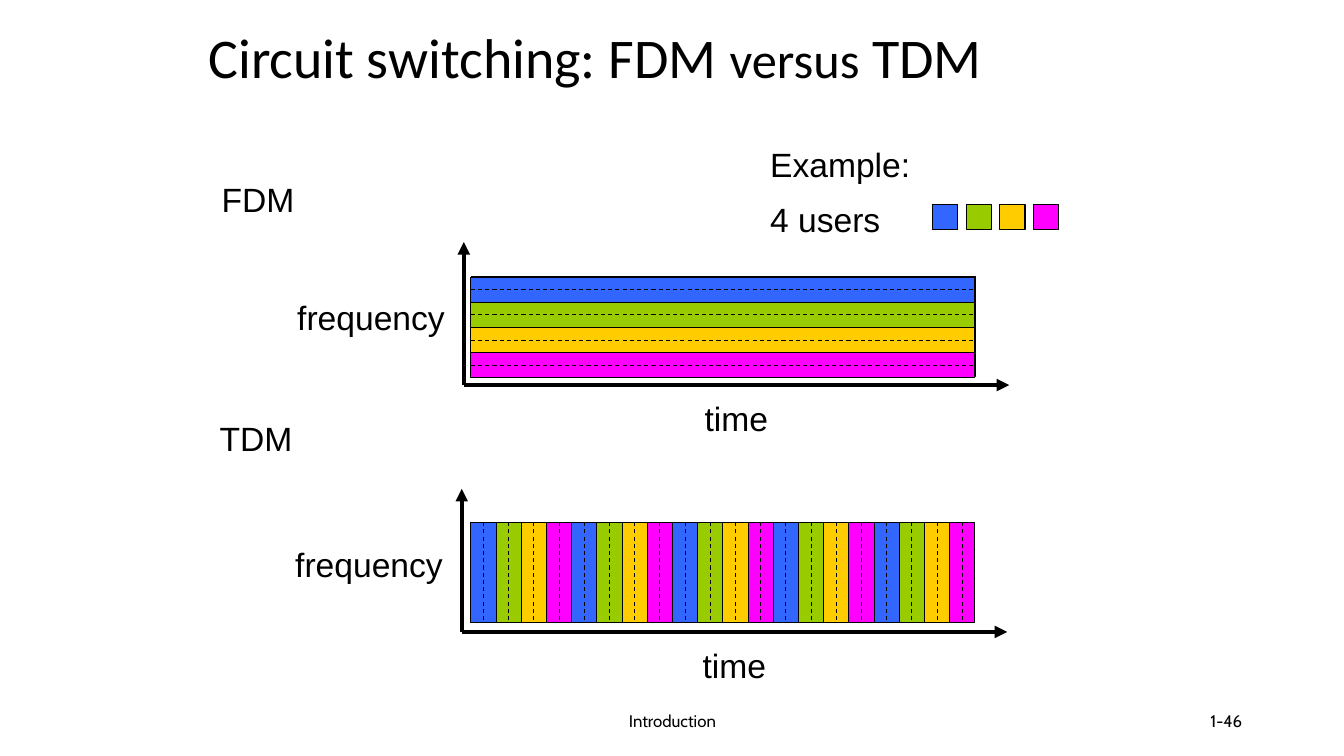
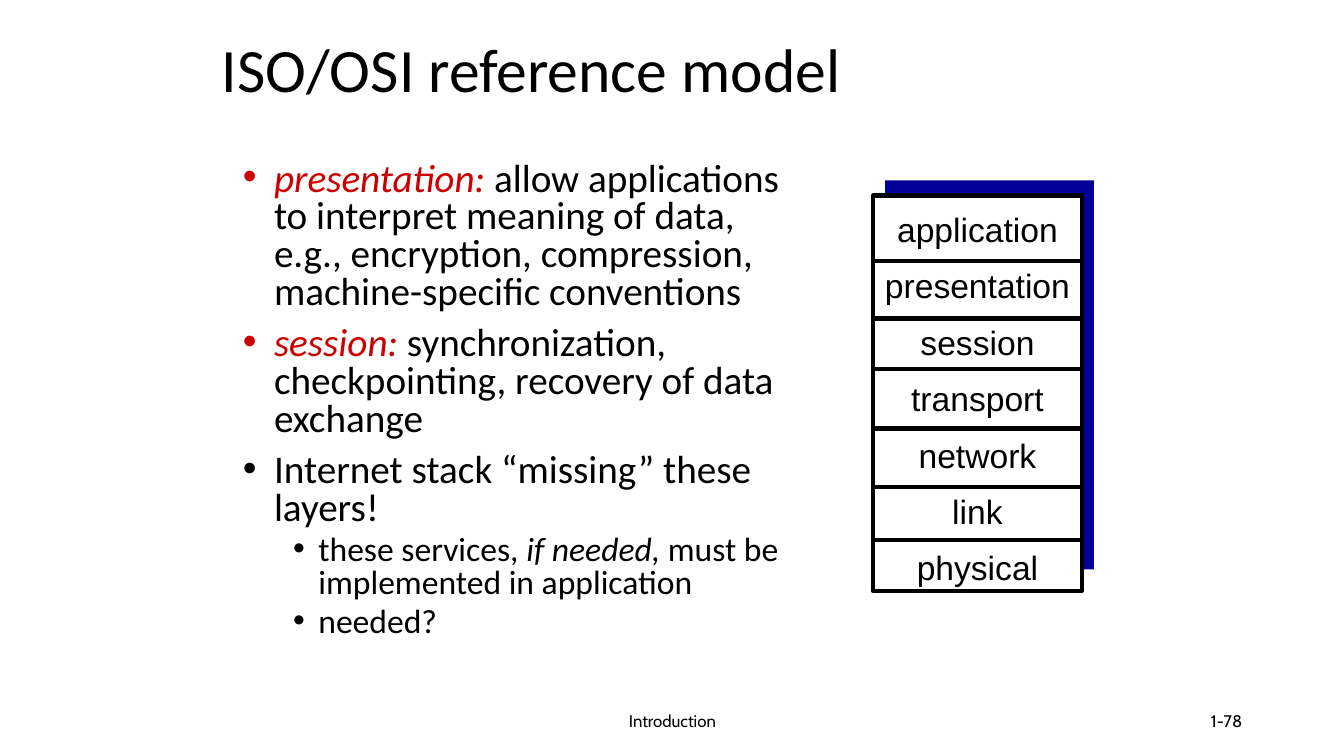
import pptx
import pptx.util
import pptx.dml.color
import pptx.enum.dml
import pptx.enum.shapes
import pptx.enum.text
import pptx.oxml.ns
import lxml.etree

Inches = pptx.util.Inches
Pt = pptx.util.Pt
Align = pptx.enum.text.PP_ALIGN
Anchor = pptx.enum.text.MSO_ANCHOR
qn = pptx.oxml.ns.qn

BLACK, WHITE, RED, NAVY, BASE = "000000", "FFFFFF", "CC0000", "000099", "4472C4"
USERS = ["3366FF", "99CC00", "FFCC00", "FF00FF"]
HEAD, PLAIN, FOOT = "Calibri", "Arial", "Cabin"
BAND = 0.25


def tint(code):
    return pptx.dml.color.RGBColor.from_string(code)


def style(para, face, size, align=Align.LEFT, lead=None):
    para.alignment = align
    if lead:
        para.line_spacing = lead
    para.font.name = face
    para.font.size = Pt(size)
    para.font.color.rgb = tint(BLACK)


def add_run(para, text, size=None, color=None, slant=None):
    run = para.add_run()
    run.text = text
    if size:
        run.font.size = Pt(size)
    if color:
        run.font.color.rgb = tint(color)
    if slant:
        run.font.italic = True


def frame(slide, box, wrap=True, anchor=Anchor.TOP):
    body = slide.shapes.add_textbox(*map(Inches, box)).text_frame
    body.word_wrap = wrap
    body.vertical_anchor = anchor
    return body


def label(slide, text, box, face=PLAIN, size=24, align=Align.LEFT,
          wrap=False, anchor=Anchor.TOP):
    para = frame(slide, box, wrap, anchor).paragraphs[0]
    style(para, face, size, align)
    add_run(para, text)


def block(slide, box, fill, width=0.75):
    kind = pptx.enum.shapes.MSO_SHAPE.RECTANGLE
    shape = slide.shapes.add_shape(kind, *map(Inches, box))
    shape.shadow.inherit = False
    shape.fill.solid()
    shape.fill.fore_color.rgb = tint(fill)
    if width:
        shape.line.color.rgb = tint(BLACK)
        shape.line.width = Pt(width)
    else:
        shape.line.fill.background()


def rule(slide, start, end, width=3, dash=False, arrow=False):
    kind = pptx.enum.shapes.MSO_CONNECTOR.STRAIGHT
    line = slide.shapes.add_connector(kind, *map(Inches, (*start, *end)))
    line.line.color.rgb = tint(BLACK)
    line.line.width = Pt(width)
    if dash:
        line.line.dash_style = pptx.enum.dml.MSO_LINE.DASH
    if arrow:
        tail = lxml.etree.SubElement(line.line._get_or_add_ln(), qn("a:tailEnd"))
        tail.set("type", "triangle")
    lxml.etree.SubElement(line._element.spPr, qn("a:effectLst"))


def title(slide, box, size, parts):
    para = frame(slide, box, anchor=Anchor.MIDDLE).paragraphs[0]
    style(para, HEAD, size, lead=0.9)
    for part in parts:
        add_run(para, *part)


def footer(slide, page):
    label(slide, "Introduction", (4.42, 6.95, 4.5, 0.4), FOOT, 12,
          Align.CENTER, True, Anchor.MIDDLE)
    label(slide, page, (9.42, 6.95, 3, 0.4), FOOT, 12,
          Align.RIGHT, True, Anchor.MIDDLE)


def axes(slide, x, y):
    rule(slide, (x, y), (x, y - 1.42), arrow=True)
    rule(slide, (x, y), (x + 5.41, y), arrow=True)
    label(slide, "frequency", (x - 1.75, y - 0.92, 1.67, 0.5))
    label(slide, "time", (x + 2.29, y + 0.08, 0.83, 0.5))


def bands(slide, box, count, across):
    x, y, w, h = box
    for i in range(count):
        step = i * BAND
        mid = step + BAND / 2
        if across:
            part = (x, y + step, w, BAND)
            ends = (x, y + mid), (x + w, y + mid)
        else:
            part = (x + step, y, BAND, h)
            ends = (x + mid, y), (x + mid, y + h)
        block(slide, part, USERS[i % len(USERS)])
        rule(slide, *ends, width=0.75, dash=True)


def legend(slide, x, y):
    label(slide, "Example:", (x, y, 1.59, 0.5))
    label(slide, "4 users", (x, y + 0.54, 1.3, 0.5))
    for i, color in enumerate(USERS):
        block(slide, (x + 1.71 + i / 3, y + 0.65, BAND, BAND), color)


def bullets(slide, box, items):
    body = frame(slide, box)
    for i, (level, parts) in enumerate(items):
        para = body.add_paragraph() if i else body.paragraphs[0]
        left, hang, size, gap = [(0.31, 0.31, 28, 10), (0.75, 0.25, 24, 5)][level]
        para.level = level
        props = para._p.get_or_add_pPr()
        props.set("marL", str(Inches(left)))
        props.set("indent", str(-Inches(hang)))
        lxml.etree.SubElement(props, qn("a:buFont")).set("typeface", PLAIN)
        lxml.etree.SubElement(props, qn("a:buChar")).set("char", "•")
        style(para, HEAD, size, lead=0.8)
        para.space_before = Pt(gap)
        for part in parts:
            add_run(para, *part)


def stack(slide, box, names, cuts):
    x, y, w, h = box
    block(slide, (x + 0.12, y - 0.15, w, h - 0.06), NAVY, 0)
    block(slide, box, WHITE, 3)
    for i, name in enumerate(names):
        label(slide, name, (x - 0.05, y + 0.08 + i * 0.56, w + 0.1, 0.5),
              align=Align.CENTER, wrap=True, anchor=Anchor.MIDDLE)
    for cut in cuts:
        rule(slide, (x - 0.02, y + cut), (x + w - 0.02, y + cut))


def switching(slide):
    title(slide, (1.97, 0.08, 9.26, 1.04), 40,
          [("Circuit switching: FDM ",), ("versus", 36), (" TDM",)])
    label(slide, "FDM", (2.1, 1.73, 0.92, 0.5))
    axes(slide, 4.6, 3.82)
    block(slide, (4.68, 2.74, 5, 1), BASE)
    bands(slide, (4.67, 2.75, 5, 1), 4, True)
    label(slide, "TDM", (2.08, 4.1, 0.92, 0.5))
    axes(slide, 4.58, 6.27)
    bands(slide, (4.67, 5.18, 5, 1), 20, False)
    legend(slide, 7.54, 1.38)
    footer(slide, "1-46")


def model(slide):
    title(slide, (2.1, 0.09, 7.11, 1.25), 44, [("ISO/OSI reference model",)])
    bullets(slide, (2.31, 1.56, 5.64, 5.08), [
        (0, [("presentation:", None, RED, True),
             (" allow applications to interpret meaning of data, e.g., "
              "encryption, compression, machine-specific conventions",)]),
        (0, [("session:", None, RED, True),
             (" synchronization, checkpointing, recovery of data exchange",)]),
        (0, [("Internet stack “missing” these layers!",)]),
        (1, [("these services, ",), ("if needed,", None, None, True),
             (" must be implemented in application",)]),
        (1, [("needed?",)]),
    ])
    stack(slide, (8.66, 1.94, 2.07, 3.92),
          ["application", "presentation", "session", "transport",
           "network", "link", "physical"],
          [0.65, 1.22, 1.72, 2.31, 2.89, 3.42])
    footer(slide, "1-78")


def main():
    deck = pptx.Presentation()
    deck.slide_width = Inches(13.33)
    deck.slide_height = Inches(7.5)
    for draw in (switching, model):
        draw(deck.slides.add_slide(deck.slide_layouts[6]))
    deck.save("out.pptx")


if __name__ == "__main__":
    main()
